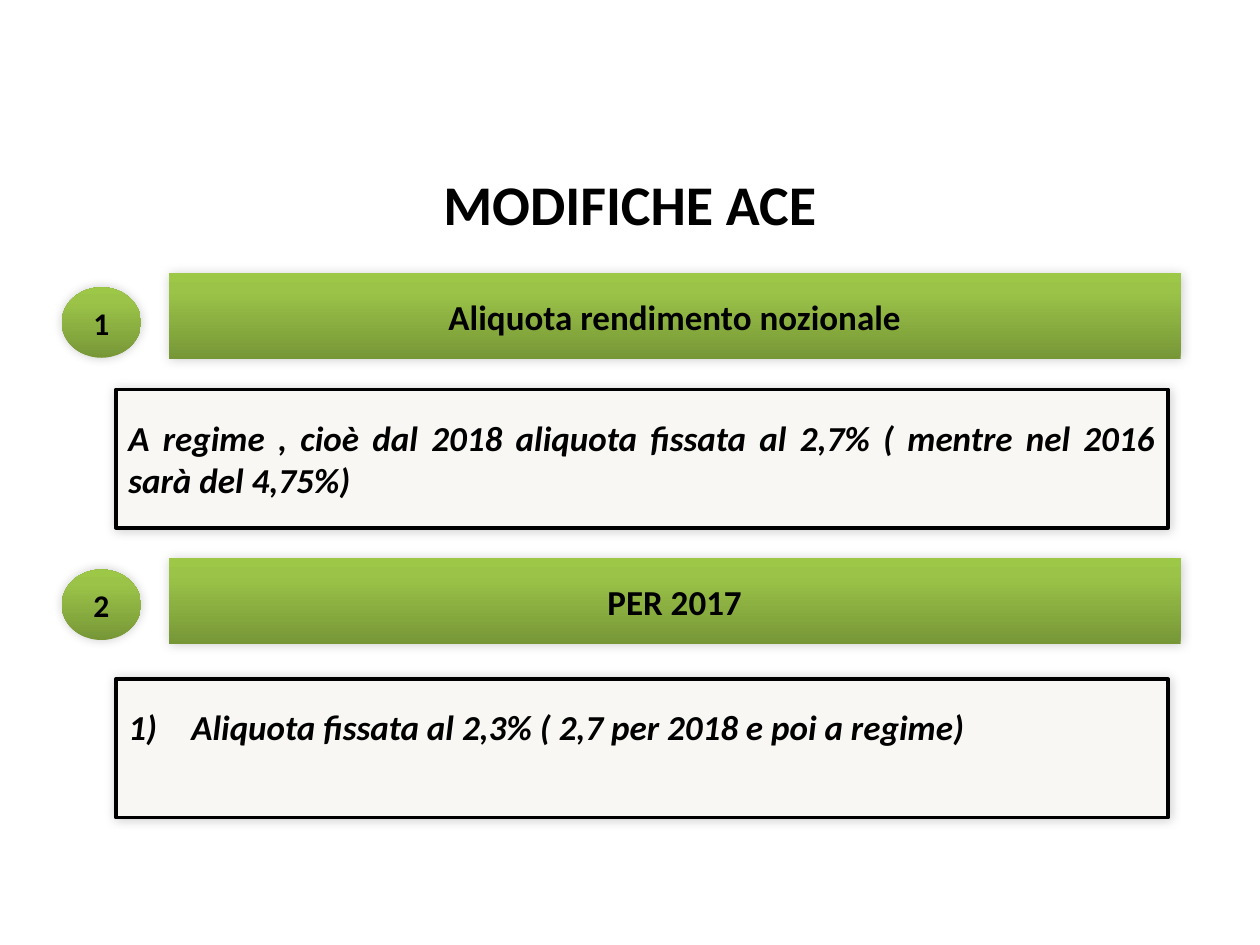
import copy
from dataclasses import dataclass

import lxml.etree
import pptx
import pptx.dml.color
import pptx.enum.shapes
import pptx.enum.text
import pptx.oxml.ns
import pptx.util

SHAPE = pptx.enum.shapes.MSO_SHAPE
ALIGN = pptx.enum.text.PP_ALIGN
MIDDLE = pptx.enum.text.MSO_ANCHOR.MIDDLE
qn = pptx.oxml.ns.qn


@dataclass(frozen=True)
class Theme:
    font: str = "Calibri"
    ink: str = "000000"
    paper: str = "F8F7F3"
    green_stops: tuple = ((0, "779737"), (0.8, "9BC348"), (1, "9DC746"))
    title_size: int = 32
    body_size: int = 20
    badge_size: int = 18
    border: int = 2
    shadow_blur: int = 6
    shadow_alpha: int = 20


def rgb(code):
    return pptx.dml.color.RGBColor.from_string(code)


class SlideBuilder:
    """Places elements on a grid of 100 columns by 75 rows, 0.1 inch each."""

    CELL = 0.1

    def __init__(self, slide, theme):
        self.slide = slide
        self.theme = theme

    def box(self, *cells):
        return [pptx.util.Inches(cell * self.CELL) for cell in cells]

    def set_wording(self, shape, wording, size, align=ALIGN.CENTER, italic=False):
        frame = shape.text_frame
        frame.word_wrap = True
        frame.vertical_anchor = MIDDLE
        frame.text = wording
        paragraph = frame.paragraphs[0]
        paragraph.alignment = align
        font = paragraph.runs[0].font
        font.name = self.theme.font
        font.size = pptx.util.Pt(size)
        font.bold = True
        font.italic = italic
        font.color.rgb = rgb(self.theme.ink)

    def add_glow(self, shape):
        """Give the shape a soft shadow spreading evenly around it."""
        shape.shadow.inherit = False
        effects = shape._element.spPr.find(qn("a:effectLst"))
        shadow = lxml.etree.SubElement(
            effects, qn("a:outerShdw"), dist="0", dir="13500000",
            blurRad=str(pptx.util.Pt(self.theme.shadow_blur)), rotWithShape="0")
        color = lxml.etree.SubElement(shadow, qn("a:srgbClr"), val=self.theme.ink)
        lxml.etree.SubElement(color, qn("a:alpha"),
                              val=str(self.theme.shadow_alpha * 1000))

    def fill_green(self, shape):
        shape.fill.gradient()
        shape.fill.gradient_angle = 90
        stop_list = shape._element.spPr.find(".//" + qn("a:gsLst"))
        stop_list.append(copy.deepcopy(stop_list[-1]))
        for stop, (position, color) in zip(shape.fill.gradient_stops,
                                           self.theme.green_stops):
            stop.position = position
            stop.color.rgb = rgb(color)
        shape.line.fill.background()

    def title(self, wording, *cells):
        heading = self.slide.shapes.add_textbox(*self.box(*cells))
        self.set_wording(heading, wording, self.theme.title_size)

    def green_label(self, preset, wording, size, *cells):
        label = self.slide.shapes.add_shape(preset, *self.box(*cells))
        self.fill_green(label)
        self.add_glow(label)
        self.set_wording(label, wording, size)

    def badge(self, number, top):
        self.green_label(SHAPE.OVAL, str(number), self.theme.badge_size,
                         4.9, top, 6.3, 5.6)

    def banner(self, wording, top):
        self.green_label(SHAPE.RECTANGLE, wording, self.theme.body_size,
                         13.4, top, 80.3, 6.8)

    def note(self, wording, top, numbered):
        panel = self.slide.shapes.add_shape(SHAPE.RECTANGLE,
                                            *self.box(9.2, top, 83.5, 11))
        panel.fill.solid()
        panel.fill.fore_color.rgb = rgb(self.theme.paper)
        panel.line.color.rgb = rgb(self.theme.ink)
        panel.line.width = pptx.util.Pt(self.theme.border)
        self.add_glow(panel)
        self.set_wording(panel, wording, self.theme.body_size, ALIGN.JUSTIFY,
                         italic=True)
        if numbered:
            self.number(panel)

    def number(self, panel):
        """Number the paragraph and lift it half a line above the middle."""
        panel.text_frame.margin_bottom = pptx.util.Inches(0.39)
        properties = panel.text_frame.paragraphs[0]._p.get_or_add_pPr()
        indent = pptx.util.Inches(0.5)
        properties.set("marL", str(indent))
        properties.set("indent", str(-indent))
        lxml.etree.SubElement(properties, qn("a:buFont"), typeface="+mj-lt")
        lxml.etree.SubElement(properties, qn("a:buAutoNum"), type="arabicParenR")


# Heading, note, numbered note, then the top rows of badge, banner and note
SECTIONS = [
    ("Aliquota rendimento nozionale",
     "A regime , cioè dal 2018 aliquota fissata al 2,7% ( mentre nel 2016 sarà del 4,75%)",
     False, 22.8, 21.7, 30.9),
    ("PER 2017",
     "Aliquota fissata al 2,3% ( 2,7 per 2018 e poi a regime)",
     True, 45.2, 44.3, 53.9),
]


def main():
    deck = pptx.Presentation()
    deck.slide_width = pptx.util.Inches(10)
    deck.slide_height = pptx.util.Inches(7.5)
    builder = SlideBuilder(deck.slides.add_slide(deck.slide_layouts[6]), Theme())

    builder.title("MODIFICHE ACE", 0, 12.9, 100, 6.4)
    for index, section in enumerate(SECTIONS, start=1):
        heading, note, numbered, badge_top, banner_top, note_top = section
        builder.badge(index, badge_top)
        builder.banner(heading, banner_top)
        builder.note(note, note_top, numbered)
    deck.save("out.pptx")


if __name__ == "__main__":
    main()
